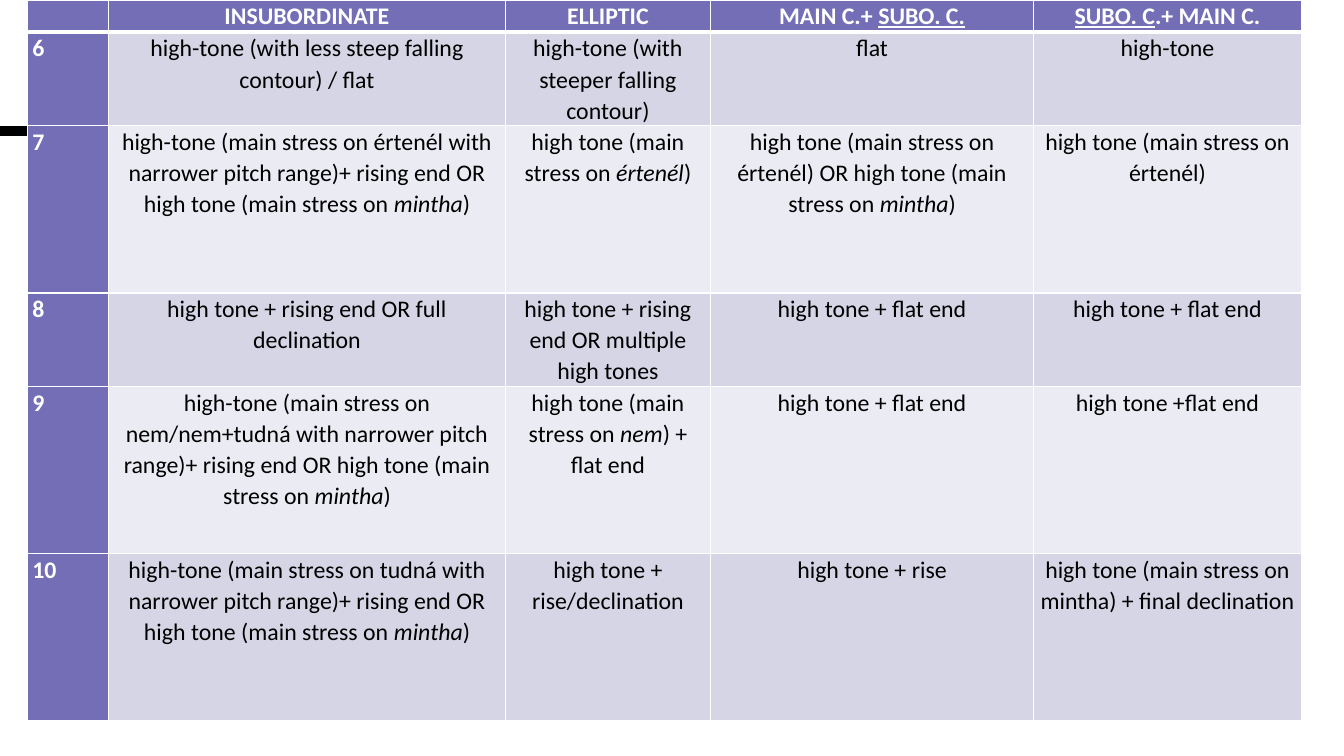
"""Build a slide with a table of intonation contours by clause type."""
from lxml import etree
from pptx import Presentation
from pptx import util as u
from pptx.dml.color import RGBColor
from pptx.enum import shapes, text
from pptx.oxml.ns import qn

COLORS = {"head": "736EB6", "odd": "D5D5E5", "even": "EBEBF3",
          "white": "FFFFFF", "black": "000000"}
COLUMN_WIDTHS = [0.81, 3.93, 2.04, 3.2, 2.66]
ROW_HEIGHTS = [0.32, 0.83, 1.66, 0.83, 1.66, 1.66]
ROWS = [
    ["", "INSUBORDINATE", "ELLIPTIC", "MAIN C.+ *SUBO. C.*", "*SUBO. C*.+ MAIN C."],
    ["6", "high-tone (with less steep falling contour) / flat",
     "high-tone (with steeper falling contour)", "flat", "high-tone"],
    ["7", "high-tone (main stress on értenél with narrower pitch range)+ rising end "
     "OR high tone (main stress on *mintha*)",
     "high tone (main stress on *értenél*)",
     "high tone (main stress on értenél) OR high tone (main stress on *mintha*)",
     "high tone (main stress on értenél)"],
    ["8", "high tone + rising end OR full declination",
     "high tone + rising end OR multiple high tones",
     "high tone + flat end", "high tone + flat end"],
    ["9", "high-tone (main stress on nem/nem+tudná with narrower pitch range)+ rising end "
     "OR high tone (main stress on *mintha*)",
     "high tone (main stress on *nem*) + flat end",
     "high tone + flat end", "high tone +flat end"],
    ["10", "high-tone (main stress on tudná with narrower pitch range)+ rising end "
     "OR high tone (main stress on *mintha*)",
     "high tone + rise/declination", "high tone + rise",
     "high tone (main stress on mintha) + final declination"],
]


def write(paragraph, content, color="black", bold=False, align=None, emphasis="italic"):
    """Write text into a paragraph, with emphasis on the parts between asterisks."""
    paragraph.alignment = align
    paragraph.line_spacing = 1.07
    for index, part in enumerate(content.split("*")):
        if part:
            run = paragraph.add_run()
            run.text = part
            run.font.name = "Calibri"
            run.font.size = u.Pt(17)
            run.font.bold = bold
            run.font.color.rgb = RGBColor.from_string(COLORS[color])
            if index % 2:
                setattr(run.font, emphasis, True)


def add_border(cell, side, points):
    """Draw a white line on one side of a cell."""
    properties = cell._tc.get_or_add_tcPr()
    line = etree.SubElement(properties, qn(f"a:ln{side}"), w=str(u.Pt(points)))
    fill = etree.SubElement(line, qn("a:solidFill"))
    etree.SubElement(fill, qn("a:srgbClr"), val=COLORS["white"])


presentation = Presentation()
presentation.slide_width = u.Inches(13.33)
presentation.slide_height = u.Inches(7.5)
slide = presentation.slides.add_slide(presentation.slide_layouts[6])

rule = slide.shapes.add_connector(shapes.MSO_CONNECTOR.STRAIGHT,
                                  0, u.Inches(1.3), u.Inches(0.88), u.Inches(1.3))
rule.line.color.rgb = RGBColor.from_string(COLORS["black"])
rule.line.width = u.Pt(6.75)
etree.SubElement(rule._element.spPr, qn("a:effectLst"))

table = slide.shapes.add_table(len(ROWS), len(COLUMN_WIDTHS), u.Inches(0.27), 0,
                               u.Inches(sum(COLUMN_WIDTHS)),
                               u.Inches(sum(ROW_HEIGHTS))).table
for column, width in zip(table.columns, COLUMN_WIDTHS):
    column.width = u.Inches(width)

for r, (contents, height) in enumerate(zip(ROWS, ROW_HEIGHTS)):
    table.rows[r].height = u.Inches(height)
    for c, content in enumerate(contents):
        cell = table.cell(r, c)
        cell.margin_left = cell.margin_right = u.Inches(0.05)
        cell.margin_top = cell.margin_bottom = 0
        for side in "LRTB":
            under_header = (r, side) in [(0, "B"), (1, "T")]
            add_border(cell, side, 3 if under_header else 1)
        heading = r == 0 or c == 0
        fill_name = "head" if heading else "odd" if r % 2 else "even"
        cell.fill.solid()
        cell.fill.fore_color.rgb = RGBColor.from_string(COLORS[fill_name])
        write(cell.text_frame.paragraphs[0], content,
              color="white" if heading else "black", bold=heading,
              align=text.PP_ALIGN.CENTER if c else text.PP_ALIGN.LEFT,
              emphasis="underline" if r == 0 else "italic")

presentation.save("out.pptx")
